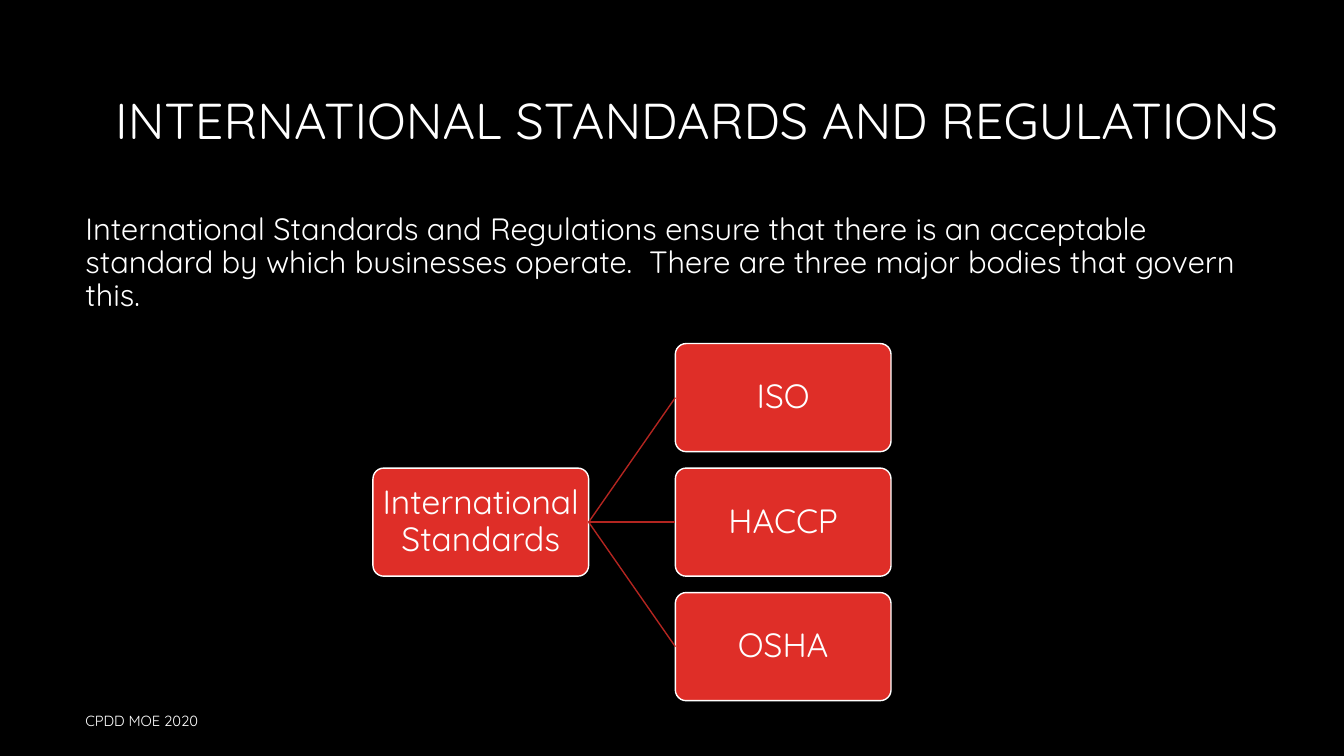
from lxml import etree
from pptx import Presentation
from pptx import util as u
from pptx.dml.color import RGBColor
from pptx.enum import shapes, text
from pptx.oxml.ns import qn

BLACK = RGBColor(0x00, 0x00, 0x00)
WHITE = RGBColor(0xFF, 0xFF, 0xFF)
RED = RGBColor(0xDF, 0x2E, 0x28)
DARK_RED = RGBColor(0xB3, 0x25, 0x20)

# Percentages of the slide's width (lefts, widths) and height (tops, heights)
MARGIN = 5.62
NODE_WIDTH, NODE_HEIGHT = 16.05, 14.3
ROOT_LEFT, BODY_LEFT = 27.75, 50.25
TREE_TOP, ROW_PITCH = 45.45, 16.47

BODIES = ["ISO", "HACCP", "OSHA"]


def write(frame, content, size, align=text.PP_ALIGN.LEFT,
          anchor=text.MSO_ANCHOR.TOP, spacing=1.0, inset=None):
    frame.word_wrap = True
    frame.vertical_anchor = anchor
    if inset is not None:
        frame.margin_left = frame.margin_right = u.Inches(inset)
        frame.margin_top = frame.margin_bottom = u.Inches(inset)
    paragraph = frame.paragraphs[0]
    paragraph.alignment = align
    paragraph.line_spacing = spacing
    run = paragraph.add_run()
    run.text = content
    run.font.name = "Quicksand"
    run.font.size = u.Pt(size)
    run.font.color.rgb = WHITE


class Deck:
    def __init__(self):
        self.presentation = Presentation()
        self.presentation.slide_width = u.Inches(13.33)
        self.presentation.slide_height = u.Inches(7.5)
        self.slide = self.presentation.slides.add_slide(self.presentation.slide_layouts[6])
        self.slide.background.fill.solid()
        self.slide.background.fill.fore_color.rgb = BLACK

    def area(self, left, top, width, height):
        """Turn percentages of the slide into lengths."""
        across = self.presentation.slide_width / 100
        down = self.presentation.slide_height / 100
        return [u.Emu(round(length)) for length in
                (left * across, top * down, width * across, height * down)]

    def label(self, place, content, size, **style):
        box = self.slide.shapes.add_textbox(*self.area(*place))
        write(box.text_frame, content, size, **style)

    def node(self, left, row, content):
        place = self.area(left, TREE_TOP + row * ROW_PITCH, NODE_WIDTH, NODE_HEIGHT)
        shape = self.slide.shapes.add_shape(shapes.MSO_SHAPE.ROUNDED_RECTANGLE, *place)
        shape.shadow.inherit = False
        shape.adjustments[0] = 0.1
        shape.fill.solid()
        shape.fill.fore_color.rgb = RED
        shape.line.color.rgb = WHITE
        shape.line.width = u.Pt(1)
        write(shape.text_frame, content, 24, align=text.PP_ALIGN.CENTER,
              anchor=text.MSO_ANCHOR.MIDDLE, spacing=0.9, inset=0.02)
        return shape

    def branch(self, parent, child):
        """Join the parent's right side to the child's left side."""
        line = self.slide.shapes.add_connector(shapes.MSO_CONNECTOR.STRAIGHT, 0, 0, 0, 0)
        line.begin_connect(parent, 3)
        line.end_connect(child, 1)
        line.line.color.rgb = DARK_RED
        line.line.width = u.Pt(1)
        etree.SubElement(line._element.spPr, qn("a:effectLst"))


def main():
    deck = Deck()
    deck.label((MARGIN, 27.6, 88.75, 63.2),
               "International Standards and Regulations ensure that there is an "
               "acceptable standard by which businesses operate.  There are three "
               "major bodies that govern this.", 22, spacing=0.9)
    deck.label((MARGIN, 92.67, 63.75, 5.33), "CPDD MOE 2020", 10.5,
               anchor=text.MSO_ANCHOR.MIDDLE)
    deck.label((4.2, 10.53, 91.65, 11.6), "INTERNATIONAL STANDARDS AND REGULATIONS", 36,
               align=text.PP_ALIGN.RIGHT, anchor=text.MSO_ANCHOR.MIDDLE, spacing=0.9)

    root = deck.node(ROOT_LEFT, (len(BODIES) - 1) / 2, "International Standards")
    for row, name in enumerate(BODIES):
        deck.branch(root, deck.node(BODY_LEFT, row, name))
    deck.presentation.save("out.pptx")


if __name__ == "__main__":
    main()
